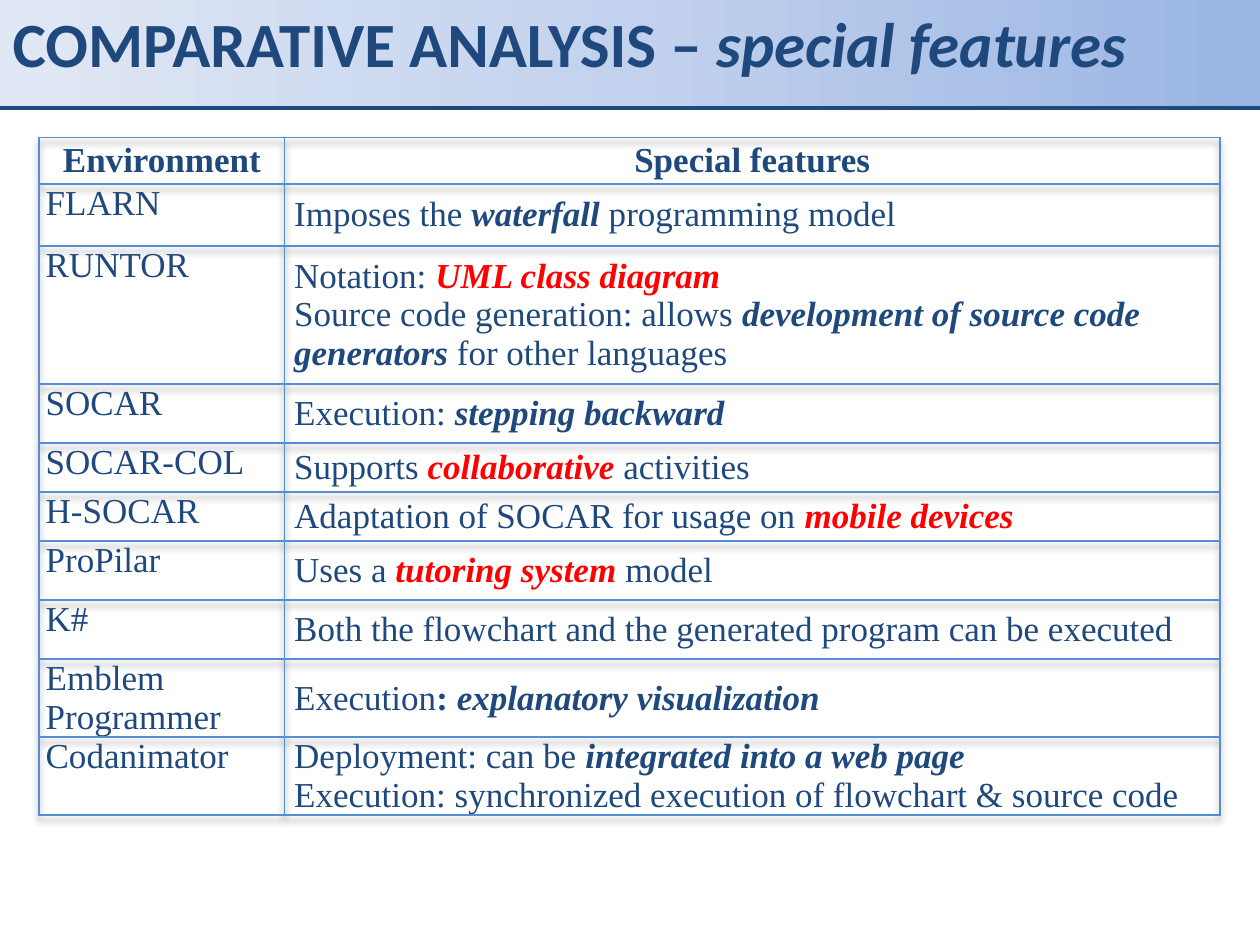
from lxml.etree import SubElement
from pptx import Presentation
from pptx.dml.color import RGBColor
from pptx.enum.shapes import MSO_CONNECTOR
from pptx.enum.text import MSO_ANCHOR, MSO_AUTO_SIZE, PP_ALIGN
from pptx.oxml import parse_xml
from pptx.oxml.ns import nsdecls, qn
from pptx.util import Cm, Pt

NAVY, RED, BORDER = "1F497D", "FF0000", "558ED5"

# Each line of a feature is a list of (text, style) pieces:
# b = bold, i = italic, r = red.
ROWS = [
    ("FLARN", 1.25, [[("Imposes the ", ""), ("waterfall", "bi"),
                      (" programming model", "")]]),
    ("RUNTOR", 2.78, [[("Notation: ", ""), ("UML class diagram", "bir")],
                      [("Source code generation: allows ", ""),
                       ("development of source code generators ", "bi"),
                       ("for other languages", "")]]),
    ("SOCAR", 1.19, [[("Execution: ", ""), ("stepping backward", "bi")]]),
    ("SOCAR-COL", 0.99, [[("Supports ", ""), ("collaborative", "bir"),
                          (" activities", "")]]),
    ("H-SOCAR", 0.99, [[("Adaptation of SOCAR for usage on ", ""),
                        ("mobile devices", "bir")]]),
    ("ProPilar", 1.19, [[("Uses a ", ""), ("tutoring system ", "bir"),
                         ("model", "")]]),
    ("K#", 1.19, [[("Both the flowchart and the generated program can be executed", "")]]),
    ("Emblem Programmer", 1.57, [[("Execution", ""), (": ", "b"),
                                  ("explanatory visualization", "bi")]]),
    ("Codanimator", 1.57, [[("Deployment: can be ", ""),
                            ("integrated into a web page", "bi")],
                           [("Execution: synchronized execution of flowchart & source code", "")]]),
]
HEADER = ("Environment", 0.94, [[("Special features", "b")]])


def add_pieces(paragraph, pieces, font_name, size):
    for text, style in pieces:
        run = paragraph.add_run()
        run.text = text
        run.font.name = font_name
        run.font.size = Pt(size)
        run.font.bold = "b" in style
        run.font.italic = "i" in style
        run.font.color.rgb = RGBColor.from_string(RED if "r" in style else NAVY)


def format_cell(cell, margin, anchor):
    cell.margin_left = cell.margin_right = Cm(margin)
    cell.margin_top = cell.margin_bottom = 0
    cell.vertical_anchor = anchor
    properties = cell._tc.get_or_add_tcPr()
    for side in ("a:lnL", "a:lnR", "a:lnT", "a:lnB"):
        line = SubElement(properties, qn(side), w=str(Pt(1)))
        SubElement(SubElement(line, qn("a:solidFill")), qn("a:srgbClr"), val=BORDER)
    cell.fill.background()


presentation = Presentation()
presentation.slide_width = Cm(25.4)
presentation.slide_height = Cm(19.05)
slide = presentation.slides.add_slide(presentation.slide_layouts[5])

# Title band
title = slide.shapes.title
title.left, title.top, title.width, title.height = 0, 0, Cm(25.4), Cm(2.18)
stops = "".join(
    f'<a:gs pos="{position * 1000}"><a:srgbClr val="{color}"/></a:gs>'
    for position, color in ((0, "9AB5E4"), (50, "C2D1ED"), (100, "E1E8F5")))
title._element.spPr.append(parse_xml(
    f'<a:gradFill {nsdecls("a")} rotWithShape="1"><a:gsLst>{stops}</a:gsLst>'
    '<a:lin ang="10800000" scaled="0"/></a:gradFill>'))
title.text_frame.auto_size = MSO_AUTO_SIZE.NONE
title.text_frame.vertical_anchor = MSO_ANCHOR.MIDDLE
paragraph = title.text_frame.paragraphs[0]
paragraph.alignment = PP_ALIGN.LEFT
paragraph.line_spacing = Pt(30)
add_pieces(paragraph, [("COMPARATIVE ANALYSIS – ", "b"), ("special features", "bi")],
           "Calibri", 36)

rule = slide.shapes.add_connector(MSO_CONNECTOR.STRAIGHT, 0, Cm(2.18), Cm(25.4), Cm(2.18))
rule.line.color.rgb = RGBColor.from_string(NAVY)
rule.line.width = Pt(2)
SubElement(rule._element.spPr, qn("a:effectLst"))

# Feature table
table_rows = [HEADER] + ROWS
frame = slide.shapes.add_table(len(table_rows), 2, Cm(0.79), Cm(2.77), Cm(23.8),
                               Cm(sum(height for _, height, _ in table_rows)))
table = frame.table
table.first_row = table.horz_banding = False
table.columns[0].width = Cm(4.95)
table.columns[1].width = Cm(18.85)
table._tbl.tblPr.insert(0, parse_xml(
    f'<a:effectLst {nsdecls("a")}><a:outerShdw blurRad="50800" dist="38100" dir="5400000">'
    '<a:srgbClr val="000000"><a:alpha val="40000"/></a:srgbClr></a:outerShdw></a:effectLst>'))

for index, (environment, height, lines) in enumerate(table_rows):
    is_header = index == 0
    table.rows[index].height = Cm(height)
    name_cell, feature_cell = table.cell(index, 0), table.cell(index, 1)
    format_cell(name_cell, 0.13, MSO_ANCHOR.MIDDLE if is_header else MSO_ANCHOR.TOP)
    format_cell(feature_cell, 0.19, MSO_ANCHOR.MIDDLE)

    paragraph = name_cell.text_frame.paragraphs[0]
    paragraph.alignment = PP_ALIGN.CENTER if is_header else PP_ALIGN.JUSTIFY
    add_pieces(paragraph, [(environment, "b" if is_header else "")], "Times New Roman", 20)

    for number, pieces in enumerate(lines):
        text_frame = feature_cell.text_frame
        paragraph = text_frame.add_paragraph() if number else text_frame.paragraphs[0]
        paragraph.alignment = PP_ALIGN.CENTER if is_header else PP_ALIGN.LEFT
        add_pieces(paragraph, pieces, "Times New Roman", 20)

presentation.save("out.pptx")
